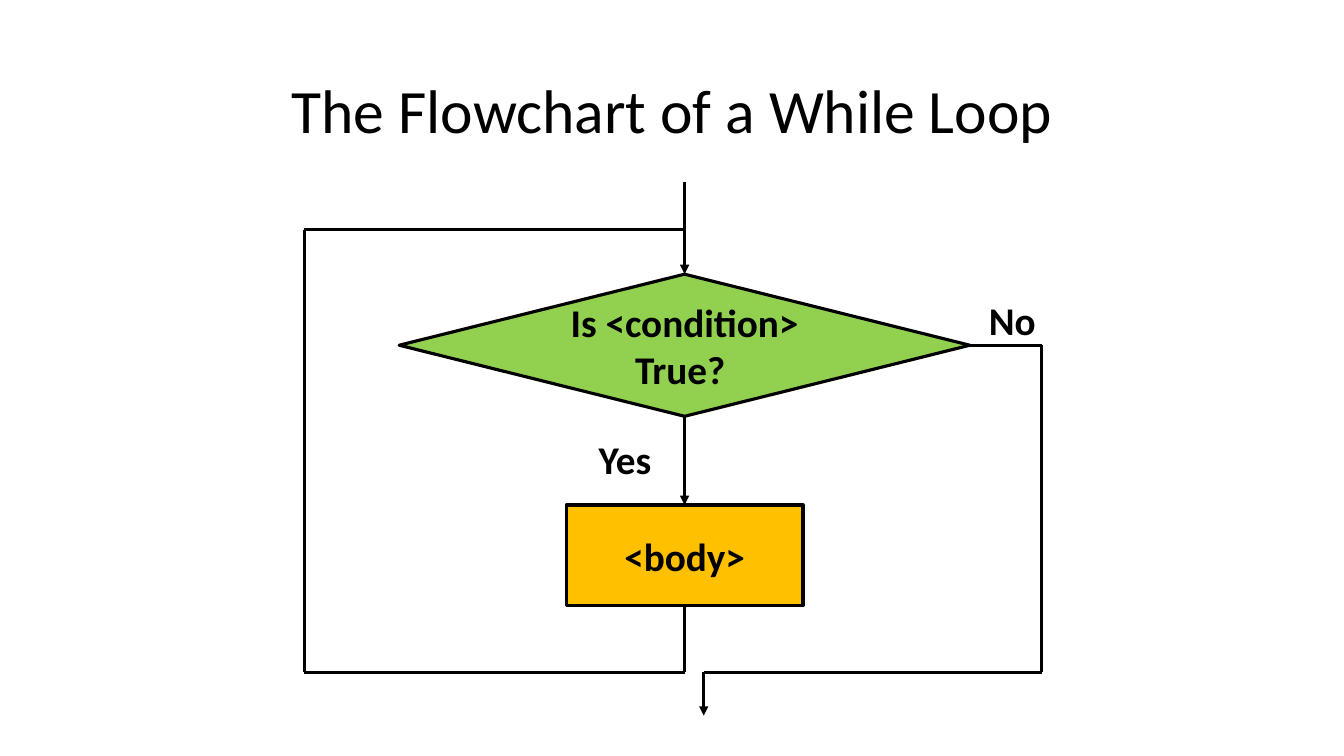
from dataclasses import dataclass

from lxml import etree
from pptx import Presentation
from pptx.dml.color import RGBColor
from pptx.enum.shapes import MSO_CONNECTOR, MSO_SHAPE
from pptx.enum.text import MSO_ANCHOR, MSO_AUTO_SIZE, PP_ALIGN
from pptx.oxml.ns import qn
from pptx.util import Inches, Pt

STRAIGHT = MSO_CONNECTOR.STRAIGHT
DIAMOND, RECTANGLE = MSO_SHAPE.DIAMOND, MSO_SHAPE.RECTANGLE
MIDDLE = MSO_ANCHOR.MIDDLE
CENTER, LEFT = PP_ALIGN.CENTER, PP_ALIGN.LEFT
FIT_SHAPE = MSO_AUTO_SIZE.SHAPE_TO_FIT_TEXT


@dataclass(frozen=True)
class Theme:
    font: str = "Calibri"
    ink: RGBColor = RGBColor(0x00, 0x00, 0x00)
    decision: RGBColor = RGBColor(0x92, 0xD0, 0x50)
    process: RGBColor = RGBColor(0xFF, 0xC0, 0x00)
    title_size: Pt = Pt(44)
    text_size: Pt = Pt(28)
    line_width: Pt = Pt(2.25)


class Flowchart:
    def __init__(self, slide, theme):
        self.slide = slide
        self.theme = theme

    def set_text(self, frame, text, size, bold=True, align=CENTER):
        paragraph = frame.paragraphs[0]
        paragraph.text = text
        paragraph.alignment = align
        font = paragraph.font
        font.name, font.size, font.bold = self.theme.font, size, bold
        font.color.rgb = self.theme.ink
        return paragraph

    def title(self, text, *box):
        frame = self.slide.shapes.add_textbox(*map(Inches, box)).text_frame
        frame.word_wrap = True
        frame.vertical_anchor = MIDDLE
        paragraph = self.set_text(frame, text, self.theme.title_size, bold=False)
        paragraph.line_spacing = 0.9

    def label(self, text, *box):
        frame = self.slide.shapes.add_textbox(*map(Inches, box)).text_frame
        frame.word_wrap = False
        frame.auto_size = FIT_SHAPE
        self.set_text(frame, text, self.theme.text_size, align=LEFT)

    def node(self, kind, text, fill, *box):
        shape = self.slide.shapes.add_shape(kind, *map(Inches, box))
        shape.shadow.inherit = False
        shape.fill.solid()
        shape.fill.fore_color.rgb = fill
        self.stroke(shape.line)
        shape.text_frame.word_wrap = True
        shape.text_frame.vertical_anchor = MIDDLE
        self.set_text(shape.text_frame, text, self.theme.text_size)

    def stroke(self, line):
        line.color.rgb = self.theme.ink
        line.width = self.theme.line_width

    def route(self, *points, arrow=False):
        """Join the points with straight lines, the last one optionally an arrow."""
        for start, end in zip(points, points[1:]):
            connector = self.slide.shapes.add_connector(
                STRAIGHT, *map(Inches, (*start, *end)))
            self.stroke(connector.line)
            properties = connector._element.spPr
            etree.SubElement(properties, qn("a:effectLst"))
        if arrow:
            outline = properties.find(qn("a:ln"))
            etree.SubElement(outline, qn("a:tailEnd"), type="triangle")


def main():
    presentation = Presentation()
    presentation.slide_width = Inches(13.33)
    presentation.slide_height = Inches(7.5)
    slide = presentation.slides.add_slide(presentation.slide_layouts[6])
    theme = Theme()
    chart = Flowchart(slide, theme)

    center, loop_left, exit_right, exit_x = 6.79, 3.02, 10.33, 6.98
    entry_y, loop_y, return_y, exit_y = 1.81, 2.28, 6.67, 7.1
    decision_left, decision_top, decision_width, decision_height = 3.96, 2.72, 5.66, 1.41
    body_top, body_width, body_height = 5.01, 2.35, 1
    decision_right = decision_left + decision_width
    decision_middle = decision_top + decision_height / 2
    decision_bottom = decision_top + decision_height

    chart.title("The Flowchart of a While Loop", 0.92, 0.4, 11.5, 1.45)
    chart.node(DIAMOND, "Is <condition> True? ", theme.decision,
               decision_left, decision_top, decision_width, decision_height)
    chart.node(RECTANGLE, "<body>", theme.process,
               center - body_width / 2, body_top, body_width, body_height)
    chart.label("No", 9.71, 2.89, 0.67, 0.57)
    chart.label("Yes", 5.84, 4.27, 0.73, 0.57)

    chart.route((center, entry_y), (center, decision_top), arrow=True)
    chart.route((center, decision_bottom), (center, body_top), arrow=True)
    chart.route((center, body_top + body_height), (center, return_y),
                (loop_left, return_y), (loop_left, loop_y), (center, loop_y))
    chart.route((decision_right, decision_middle), (exit_right, decision_middle),
                (exit_right, return_y), (exit_x, return_y), (exit_x, exit_y),
                arrow=True)
    presentation.save("out.pptx")


if __name__ == "__main__":
    main()
